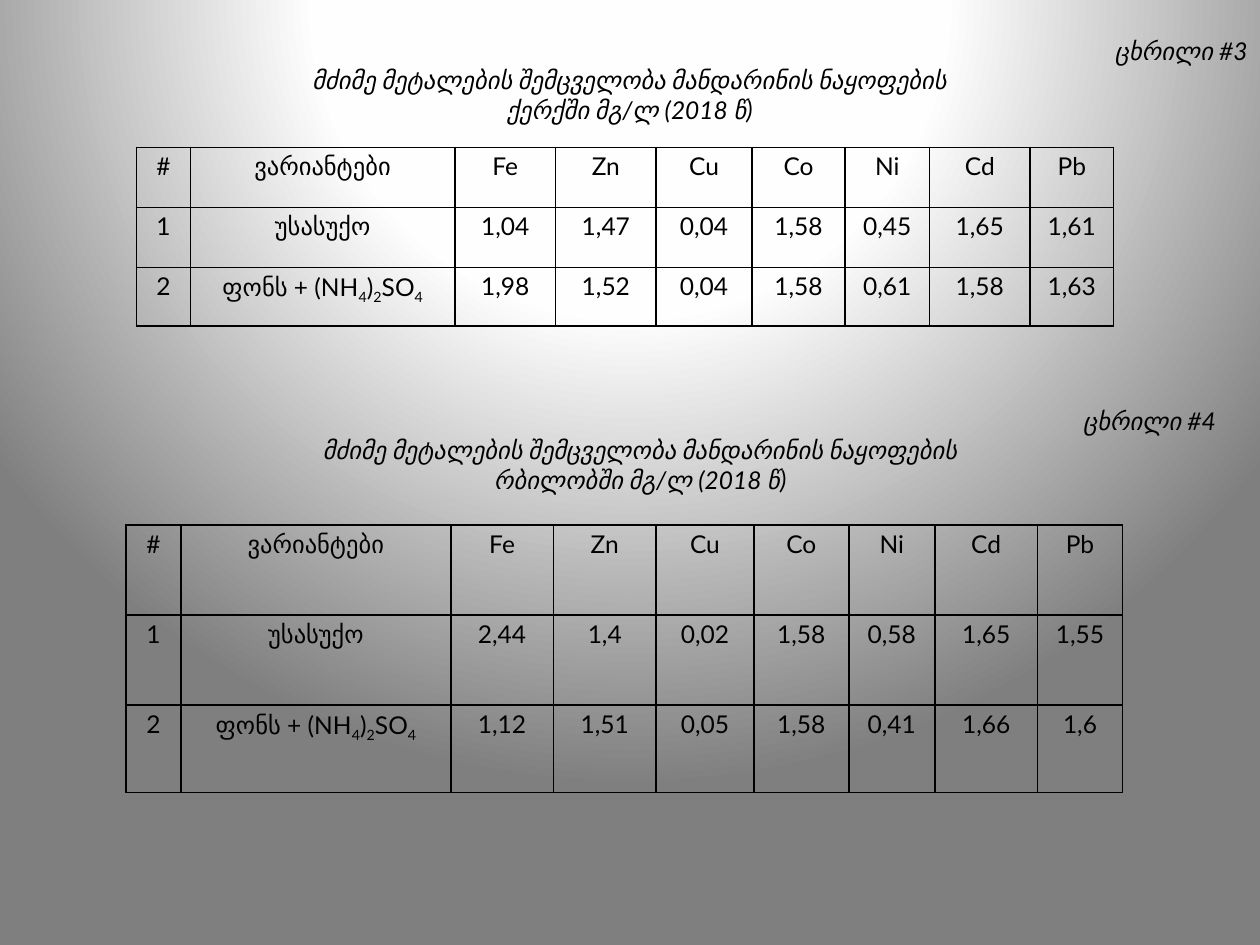
from dataclasses import dataclass

from pptx import Presentation
from pptx.dml.color import RGBColor
from pptx.enum.text import MSO_ANCHOR, PP_ALIGN
from pptx.oxml import parse_xml
from pptx.oxml.ns import nsdecls
from pptx.util import Cm, Pt


@dataclass(frozen=True)
class Theme:
    font: str = "Lato"
    size: int = 14
    ink: str = "000000"
    border: int = 1
    line_spacing: float = 1.15
    subscript: str = "-25000"
    gradient: tuple = ((0, "FFFFFF"), (40, "FEFEFE"), (100, "7F7F7F"))


THEME = Theme()
COLUMN_CM = (1.09, 5.33, 2.03, 2.03, 1.93, 1.88, 1.7, 2.03, 1.68)
ROW_CM = (1.21, 1.21, 1.18)
HEADER = ("#", "ვარიანტები", "Fe", "Zn", "Cu", "Co", "Ni", "Cd", "Pb")
VARIANTS = ("უსასუქო", "ფონს + (NH_4_)_2_SO_4")
SUBJECT = "მძიმე მეტალების შემცველობა მანდარინის ნაყოფების"
PEEL = (
    ("1,04", "1,47", "0,04", "1,58", "0,45", "1,65", "1,61"),
    ("1,98", "1,52", "0,04", "1,58", "0,61", "1,58", "1,63"),
)
PULP = (
    ("2,44", "1,4", "0,02", "1,58", "0,58", "1,65", "1,55"),
    ("1,12", "1,51", "0,05", "1,58", "0,41", "1,66", "1,6"),
)


def paint_background(slide):
    stops = "".join(
        f'<a:gs pos="{position * 1000}"><a:srgbClr val="{color}"/></a:gs>'
        for position, color in THEME.gradient
    )
    background = parse_xml(
        f'<p:bg {nsdecls("p", "a")}><p:bgPr><a:gradFill rotWithShape="1">'
        f'<a:gsLst>{stops}</a:gsLst><a:path path="circle">'
        '<a:fillToRect l="50000" t="-80000" r="50000" b="180000"/></a:path>'
        "</a:gradFill><a:effectLst/></p:bgPr></p:bg>"
    )
    slide.element.cSld.insert(0, background)


def style_run(run, italic=False):
    run.font.name = THEME.font
    run.font.size = Pt(THEME.size)
    run.font.italic = italic
    run.font.color.rgb = RGBColor.from_string(THEME.ink)


def add_caption(slide, left, top, width, height, top_inset, lines):
    caption = slide.shapes.add_textbox(Cm(left), Cm(top), Cm(width), Cm(height))
    frame = caption.text_frame
    frame.word_wrap = True
    frame.vertical_anchor = MSO_ANCHOR.TOP
    frame.margin_top = Cm(top_inset)
    frame.text = "\n".join(lines)
    for index, paragraph in enumerate(frame.paragraphs):
        paragraph.alignment = PP_ALIGN.CENTER if index else PP_ALIGN.RIGHT
        for run in paragraph.runs:
            style_run(run, italic=True)


def outline_cell(cell):
    properties = cell._tc.get_or_add_tcPr()
    for side in ("lnL", "lnR", "lnT", "lnB"):
        properties.append(parse_xml(
            f'<a:{side} {nsdecls("a")} w="{Pt(THEME.border)}"><a:solidFill>'
            f'<a:srgbClr val="{THEME.ink}"/></a:solidFill></a:{side}>'
        ))
    cell.fill.background()


def fill_cell(cell, content):
    outline_cell(cell)
    cell.margin_left = cell.margin_right = Cm(0.18)
    cell.margin_top = cell.margin_bottom = 0
    paragraph = cell.text_frame.paragraphs[0]
    paragraph.alignment = PP_ALIGN.CENTER
    paragraph.line_spacing = THEME.line_spacing
    for index, part in enumerate(content.split("_")):
        run = paragraph.add_run()
        run.text = part
        style_run(run)
        if index % 2:
            run.font._element.set("baseline", THEME.subscript)


def add_metals_table(slide, left, top, column_scale, row_scale, readings):
    rows = [HEADER] + [
        (str(number), variant, *values)
        for number, (variant, values) in enumerate(zip(VARIANTS, readings), 1)
    ]
    widths = [Cm(width * column_scale) for width in COLUMN_CM]
    heights = [Cm(height * row_scale) for height in ROW_CM]
    table = slide.shapes.add_table(
        len(rows), len(HEADER), Cm(left), Cm(top), sum(widths), sum(heights)
    ).table
    table.first_row = table.horz_banding = False
    for column, width in zip(table.columns, widths):
        column.width = width
    for row, height, contents in zip(table.rows, heights, rows):
        row.height = height
        for cell, content in zip(row.cells, contents):
            fill_cell(cell, content)


def main():
    presentation = Presentation()
    presentation.slide_width, presentation.slide_height = Cm(25.4), Cm(19.05)
    slide = presentation.slides.add_slide(presentation.slide_layouts[6])
    paint_background(slide)
    add_metals_table(slide, 2.75, 2.97, 1, 1, PEEL)
    add_caption(slide, 0, 0, 25.4, 3.43, 0.72,
                ("ცხრილი #3", SUBJECT, "ქერქში მგ/ლ (2018 წ)"))
    add_metals_table(slide, 2.54, 10.58, 1.02, 1.5, PULP)
    add_caption(slide, 1.06, 8.05, 23.7, 2.06, 0.13,
                ("ცხრილი #4", SUBJECT, "რბილობში მგ/ლ (2018 წ)"))
    presentation.save("out.pptx")


if __name__ == "__main__":
    main()
